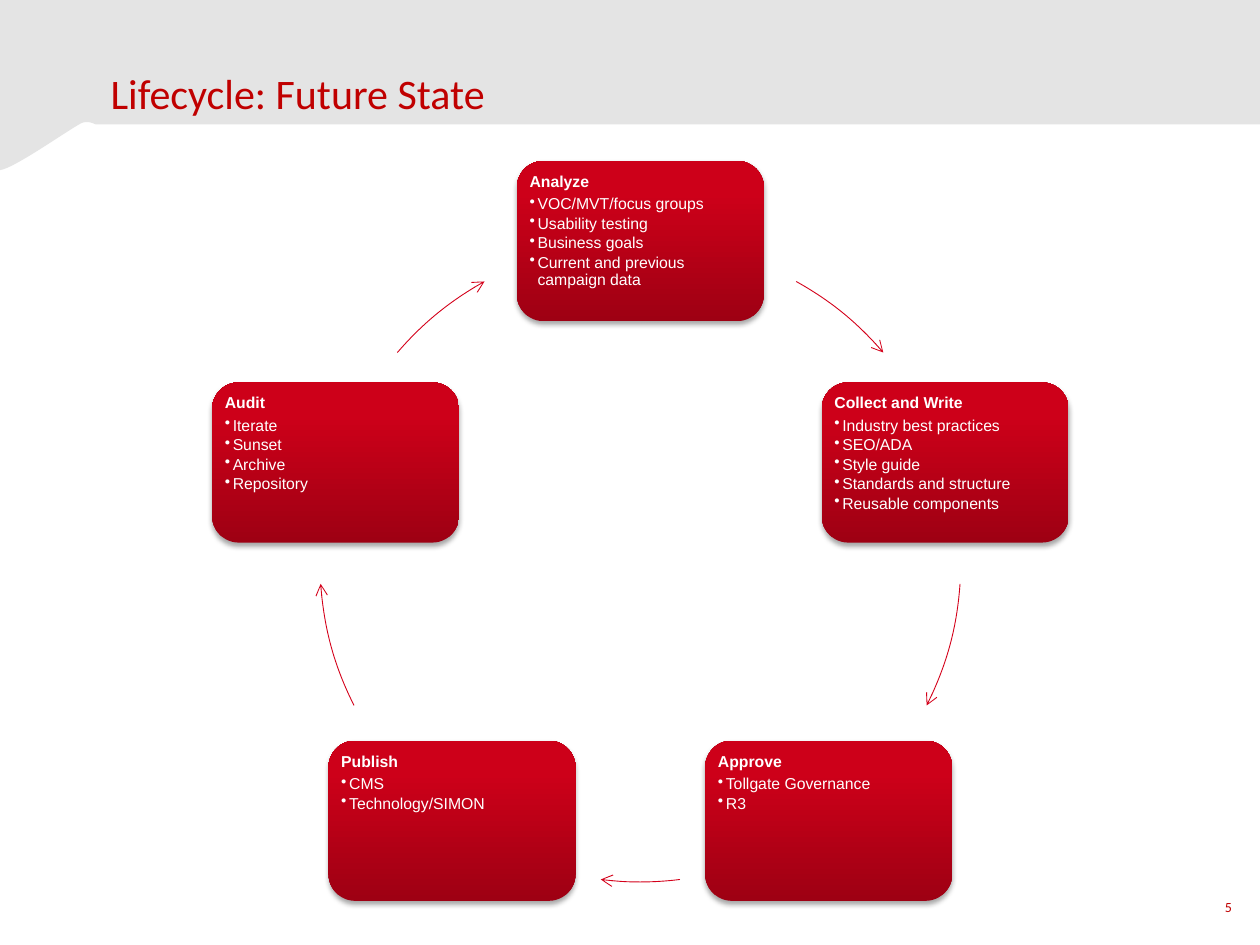
import math

from lxml import etree
from pptx import Presentation
from pptx.dml.color import RGBColor
from pptx.enum.shapes import MSO_SHAPE
from pptx.enum.text import MSO_ANCHOR, PP_ALIGN
from pptx.oxml.ns import qn
from pptx.util import Cm, Pt

ROUNDED, ARC = MSO_SHAPE.ROUNDED_RECTANGLE, MSO_SHAPE.ARC
TOP, MIDDLE, BOTTOM = MSO_ANCHOR.TOP, MSO_ANCHOR.MIDDLE, MSO_ANCHOR.BOTTOM
LEFT, CENTER = PP_ALIGN.LEFT, PP_ALIGN.CENTER

COLORS = {
    "band": "E4E4E4",
    "heading": "C00000",
    "arrow": "D4001A",
    "card_text": "FFFFFF",
    "shadow": "000000",
}
CARD_GRADIENT = [(0, "9E0013"), (80, "CD0019"), (100, "CE0019")]

# Clockwise from the top of the cycle
STAGES = [
    ("Analyze", ["VOC/MVT/focus groups", "Usability testing", "Business goals",
                 "Current and previous campaign data"]),
    ("Collect and Write", ["Industry best practices", "SEO/ADA", "Style guide",
                           "Standards and structure", "Reusable components"]),
    ("Approve", ["Tollgate Governance", "R3"]),
    ("Publish", ["CMS", "Technology/SIMON"]),
    ("Audit", ["Iterate", "Sunset", "Archive", "Repository"]),
]
# Start and end of each arrow, in degrees clockwise from the right
ARROW_ANGLES = [(299.1, 319.3), (4, 26.7), (82.9, 97.1), (153.3, 176), (220.7, 240.9)]
CARD_WIDTH, CARD_HEIGHT = 4.98, 3.23


def rgb(name):
    return RGBColor.from_string(COLORS[name])


def add_xml(parent, tag, **attributes):
    return etree.SubElement(parent, qn(tag), attributes)


def style_font(paragraph, name, size, color, bold=False):
    font = paragraph.font
    font.name, font.size, font.bold = name, Pt(size), bold
    font.color.rgb = rgb(color)


def bezier(start, control1, control2, end, steps=16):
    for step in range(1, steps + 1):
        t = step / steps
        weights = ((1 - t) ** 3, 3 * t * (1 - t) ** 2, 3 * t * t * (1 - t), t ** 3)
        yield tuple(sum(w * p[axis] for w, p in zip(weights, (start, control1, control2, end)))
                    for axis in (0, 1))


def add_band(slide, left, top, width, height):
    """Grey header band with a wave that drops at the left edge."""
    edge, crest, tip = (1.93, height), (1.63, height - 0.02), (0, height + 0.92)
    outline = [(width, 0), (width, height), edge]
    outline += bezier(edge, (1.83, height - 0.05), (1.73, height - 0.07), crest)
    outline += bezier(crest, (1.3, height + 0.16), (0.28, height + 0.89), tip)
    builder = slide.shapes.build_freeform(Cm(left), Cm(top))
    builder.add_line_segments([(Cm(left + x), Cm(top + y)) for x, y in outline], close=True)
    band = builder.convert_to_shape()
    band.shadow.inherit = False
    band.fill.solid()
    band.fill.fore_color.rgb = rgb("band")
    band.line.fill.background()


def add_label(slide, left, top, width, height, text, size, anchor, align):
    frame = slide.shapes.add_textbox(Cm(left), Cm(top), Cm(width), Cm(height)).text_frame
    frame.word_wrap = True
    frame.vertical_anchor = anchor
    paragraph = frame.paragraphs[0]
    paragraph.text = text
    paragraph.alignment = align
    style_font(paragraph, "Calibri", size, "heading")


def paint_card(card):
    """Vertical gradient without outline, and a soft shadow below."""
    card.fill.gradient()
    card.fill.gradient_angle = 90
    properties = card._element.spPr
    stops = properties.find(".//" + qn("a:gsLst"))
    for stop in list(stops):
        stops.remove(stop)
    for position, color in CARD_GRADIENT:
        stop = add_xml(stops, "a:gs", pos=str(position * 1000))
        add_xml(stop, "a:srgbClr", val=color)
    card.line.fill.background()
    card.shadow.inherit = False
    shadow = add_xml(properties.find(qn("a:effectLst")), "a:outerShdw",
                     blurRad=str(Pt(3.1)), dist=str(Pt(1.8)), dir="5400000", rotWithShape="0")
    add_xml(add_xml(shadow, "a:srgbClr", val=COLORS["shadow"]), "a:alpha", val="35000")


def add_card(slide, left, top, width, height, stage, tasks):
    card = slide.shapes.add_shape(ROUNDED, Cm(left), Cm(top), Cm(width), Cm(height))
    paint_card(card)
    frame = card.text_frame
    frame.word_wrap = True
    frame.vertical_anchor = TOP
    frame.margin_left = frame.margin_right = frame.margin_top = frame.margin_bottom = Cm(0.1)
    for index, text in enumerate([stage] + tasks):
        is_stage = index == 0
        paragraph = frame.paragraphs[0] if is_stage else frame.add_paragraph()
        paragraph.text = text
        paragraph.alignment = LEFT
        paragraph.line_spacing = 0.9
        paragraph.space_after = Pt(3.15 if is_stage else 1.35)
        if not is_stage:
            paragraph.level = 1
            bullet = paragraph._p.get_or_add_pPr()
            bullet.set("marL", str(Cm(0.16)))
            bullet.set("indent", str(-Cm(0.16)))
            add_xml(bullet, "a:buChar", char="•")
        style_font(paragraph, "Arial", 9, "card_text", bold=is_stage)


def add_cycle_arrow(slide, left, top, diameter, start, end):
    arrow = slide.shapes.add_shape(ARC, Cm(left), Cm(top), Cm(diameter), Cm(diameter))
    # Angles are stored in 60000ths of a degree, adjustments in 100000ths
    arrow.adjustments[0], arrow.adjustments[1] = start * 0.6, end * 0.6
    arrow.shadow.inherit = False
    arrow.fill.background()
    arrow.line.color.rgb = rgb("arrow")
    arrow.line.width = Pt(0.5)
    add_xml(arrow.line._get_or_add_ln(), "a:tailEnd", type="arrow")


def add_cycle(slide, left, top, diameter):
    """Cards centred at equal steps on a circle, joined by arcs of it."""
    radius = diameter / 2
    for index, ((stage, tasks), (start, end)) in enumerate(zip(STAGES, ARROW_ANGLES)):
        angle = math.tau * index / len(STAGES) - math.pi / 2
        center_x = left + radius * (1 + math.cos(angle))
        center_y = top + radius * (1 + math.sin(angle))
        add_card(slide, center_x - CARD_WIDTH / 2, center_y - CARD_HEIGHT / 2,
                 CARD_WIDTH, CARD_HEIGHT, stage, tasks)
        add_cycle_arrow(slide, left, top, diameter, start, end)


def main():
    deck = Presentation()
    deck.slide_width, deck.slide_height = Cm(25.4), Cm(19.05)
    slide = deck.slides.add_slide(deck.slide_layouts[6])
    add_band(slide, 0, 0, 25.43, 2.51)
    add_label(slide, 1.98, 0.1, 22.15, 2.41, "Lifecycle: Future State", 24, BOTTOM, LEFT)
    add_label(slide, 24.13, 17.78, 1.27, 1.02, "5", 8, MIDDLE, CENTER)
    add_cycle(slide, 6.45, 4.86, 12.92)
    deck.save("out.pptx")


if __name__ == "__main__":
    main()
